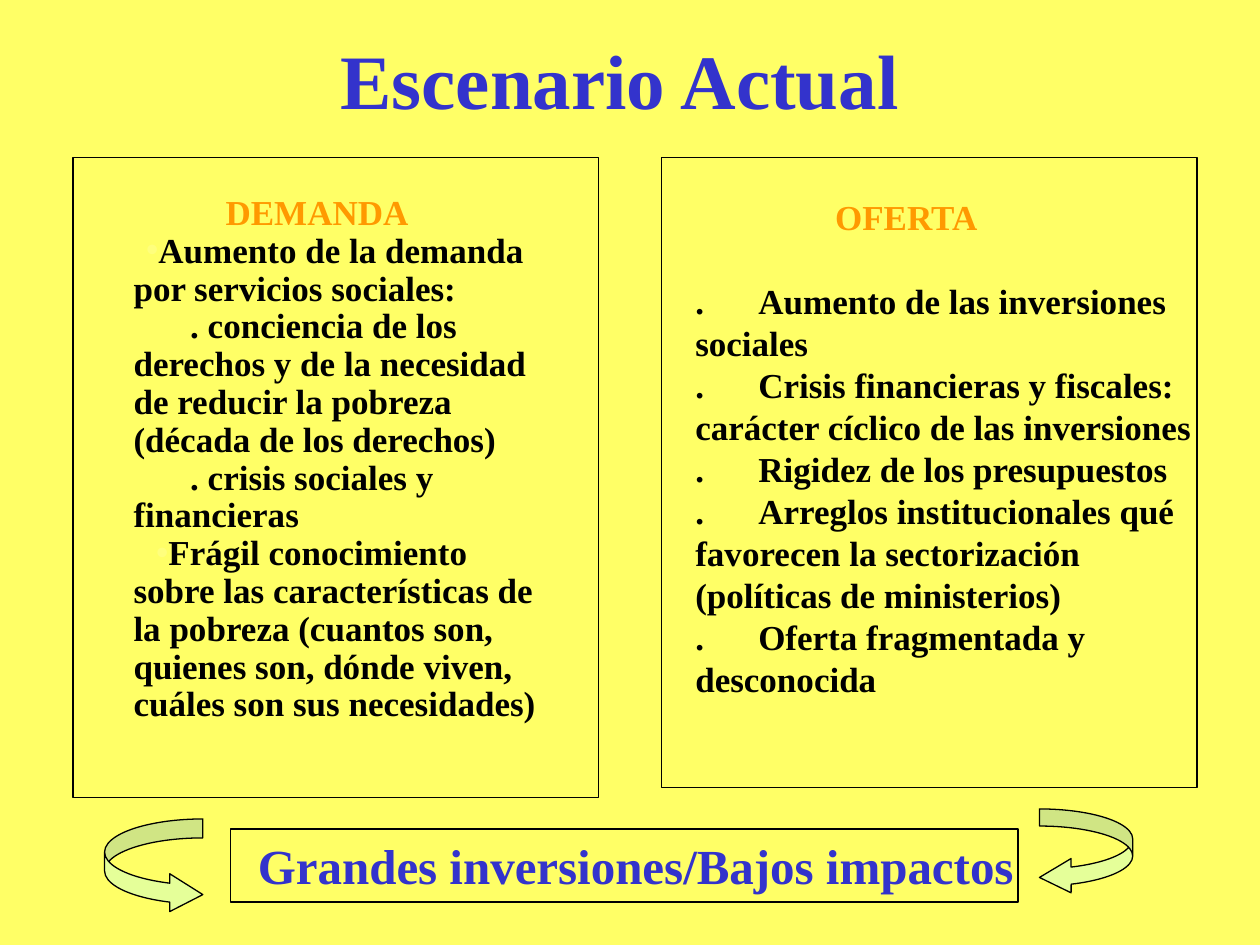
from dataclasses import dataclass
from typing import Optional

from lxml import etree
from pptx import Presentation
from pptx.dml.color import RGBColor
from pptx.enum import shapes, text
from pptx.oxml import ns
from pptx.util import Inches, Pt


@dataclass(frozen=True)
class Theme:
    font: str = "Times New Roman"
    background: str = "FFFF66"
    accent: str = "3333CC"
    heading: str = "FF9900"
    ink: str = "000000"
    bullet: str = "FFFF7D"
    arrow: str = "CCFFCC"
    arrow_alpha: int = 50
    title_size: int = 44
    body_size: int = 20
    banner_size: int = 28
    line_width: float = 0.75


@dataclass(frozen=True)
class Box:
    left: float
    top: float
    width: float
    height: float

    def lengths(self):
        return [Inches(v) for v in (self.left, self.top, self.width, self.height)]


@dataclass(frozen=True)
class Line:
    """A paragraph; first is the first-line offset from the left margin."""
    words: str
    color: str
    first: float = 0
    bullet: bool = False
    before: float = 0
    tab: Optional[float] = None


@dataclass(frozen=True)
class Arrow:
    preset: shapes.MSO_SHAPE
    box: Box
    adjustments: tuple


THEME = Theme()
DEMAND_MARGIN = 0.38
DOT_TAB = 0.34

DEMAND = [
    Line("DEMANDA", THEME.heading, first=0.73),
    Line("Aumento de la demanda por servicios sociales:", THEME.ink,
         first=0.1, bullet=True),
    Line(". conciencia de los derechos y de la necesidad de reducir la pobreza "
         "(década de los derechos)", THEME.ink, first=0.45),
    Line(". crisis sociales y financieras", THEME.ink, first=0.45),
    Line("Frágil conocimiento sobre las características de la pobreza "
         "(cuantos son, quienes son, dónde viven, cuáles son sus necesidades)",
         THEME.ink, first=0.18, bullet=True),
]

SUPPLY_POINTS = [
    "Aumento de las inversiones sociales",
    "Crisis financieras y fiscales: carácter cíclico de las inversiones",
    "Rigidez de los presupuestos",
    "Arreglos institucionales qué favorecen la sectorización "
    "(políticas de ministerios)",
    "Oferta fragmentada y desconocida",
]
SUPPLY = [Line("OFERTA", THEME.heading, first=1.11)] + [
    Line(f".\t{point}", THEME.ink, before=0 if index else 24, tab=DOT_TAB)
    for index, point in enumerate(SUPPLY_POINTS)
]

ARROWS = [
    Arrow(shapes.MSO_SHAPE.CURVED_RIGHT_ARROW, Box(0.83, 6.5, 0.78, 0.75),
          (0.2, 0.4, 0.35)),
    Arrow(shapes.MSO_SHAPE.CURVED_LEFT_ARROW, Box(8.25, 6.42, 0.74, 0.68),
          (0.2, 0.4, 0.37)),
]
FRAMES = [
    Box(0.58, 1.25, 4.17, 5.08),
    Box(5.25, 1.25, 4.25, 5),
    Box(1.83, 6.58, 6.25, 0.58),
]


def place(shape, box: Box) -> None:
    shape.left, shape.top, shape.width, shape.height = box.lengths()


def write(paragraph, words: str, *, size: float, color: str, align=None,
          spacing: float = 1, before: float = 0) -> None:
    paragraph.alignment = align
    paragraph.line_spacing = spacing
    paragraph.space_before = Pt(before)
    run = paragraph.add_run()
    run.text = words
    run.font.name = THEME.font
    run.font.size = Pt(size)
    run.font.bold = True
    run.font.color.rgb = RGBColor.from_string(color)


def add_child(parent, tag: str, **attributes: str):
    return etree.SubElement(parent, ns.qn(tag), attributes)


def set_indent(paragraph, line: Line, margin: float) -> None:
    """Set margins, then the bullet and the tab stop in schema order."""
    properties = paragraph._p.get_or_add_pPr()
    properties.set("marL", str(Inches(margin)))
    properties.set("indent", str(Inches(line.first)))
    if line.bullet:
        color = add_child(properties, "a:buClr")
        add_child(color, "a:srgbClr", val=THEME.bullet)
        add_child(properties, "a:buChar", char="•")
    else:
        add_child(properties, "a:buNone")
    if line.tab is not None:
        tabs = add_child(properties, "a:tabLst")
        add_child(tabs, "a:tab", pos=str(Inches(line.tab)), algn="l")


def write_column(frame, lines: list[Line], margin: float, spacing: float) -> None:
    frame.word_wrap = True
    frame.auto_size = text.MSO_AUTO_SIZE.NONE
    for index, line in enumerate(lines):
        paragraph = frame.add_paragraph() if index else frame.paragraphs[0]
        write(paragraph, line.words, size=THEME.body_size, color=line.color,
              spacing=spacing, before=line.before)
        set_indent(paragraph, line, margin)


def add_outlined(slide, preset: shapes.MSO_SHAPE, box: Box):
    shape = slide.shapes.add_shape(preset, *box.lengths())
    shape.shadow.inherit = False
    shape.fill.background()
    shape.line.color.rgb = RGBColor.from_string(THEME.ink)
    shape.line.width = Pt(THEME.line_width)
    return shape


def add_arrow(slide, arrow: Arrow) -> None:
    shape = add_outlined(slide, arrow.preset, arrow.box)
    for index, value in enumerate(arrow.adjustments):
        shape.adjustments[index] = value
    shape.fill.solid()
    shape.fill.fore_color.rgb = RGBColor.from_string(THEME.arrow)
    color = shape._element.spPr.find(ns.qn("a:solidFill"))[0]
    add_child(color, "a:alpha", val=str(THEME.arrow_alpha * 1000))


def main() -> None:
    deck = Presentation()
    deck.slide_width, deck.slide_height = Inches(10), Inches(7.5)
    slide = deck.slides.add_slide(deck.slide_layouts[1])
    slide.background.fill.solid()
    slide.background.fill.fore_color.rgb = RGBColor.from_string(THEME.background)

    title, demand = slide.placeholders
    place(title, Box(0.67, 0, 8.5, 1.25))
    title.text_frame.vertical_anchor = text.MSO_ANCHOR.MIDDLE
    write(title.text_frame.paragraphs[0], "Escenario Actual",
          size=THEME.title_size, color=THEME.accent, align=text.PP_ALIGN.CENTER)

    place(demand, Box(0.58, 1.5, 3.92, 4.5))
    write_column(demand.text_frame, DEMAND, DEMAND_MARGIN, spacing=0.9)

    supply = slide.shapes.add_textbox(*Box(5.42, 1.5, 4.17, 4.5).lengths())
    write_column(supply.text_frame, SUPPLY, margin=0, spacing=1)

    banner = slide.shapes.add_textbox(*Box(0.55, 6.58, 8.99, 0.57).lengths())
    banner.text_frame.word_wrap = True
    write(banner.text_frame.paragraphs[0], "Grandes inversiones/Bajos impactos",
          size=THEME.banner_size, color=THEME.accent, align=text.PP_ALIGN.CENTER)

    for arrow in ARROWS:
        add_arrow(slide, arrow)
    for box in FRAMES:
        add_outlined(slide, shapes.MSO_SHAPE.RECTANGLE, box)

    deck.save("out.pptx")


if __name__ == "__main__":
    main()
